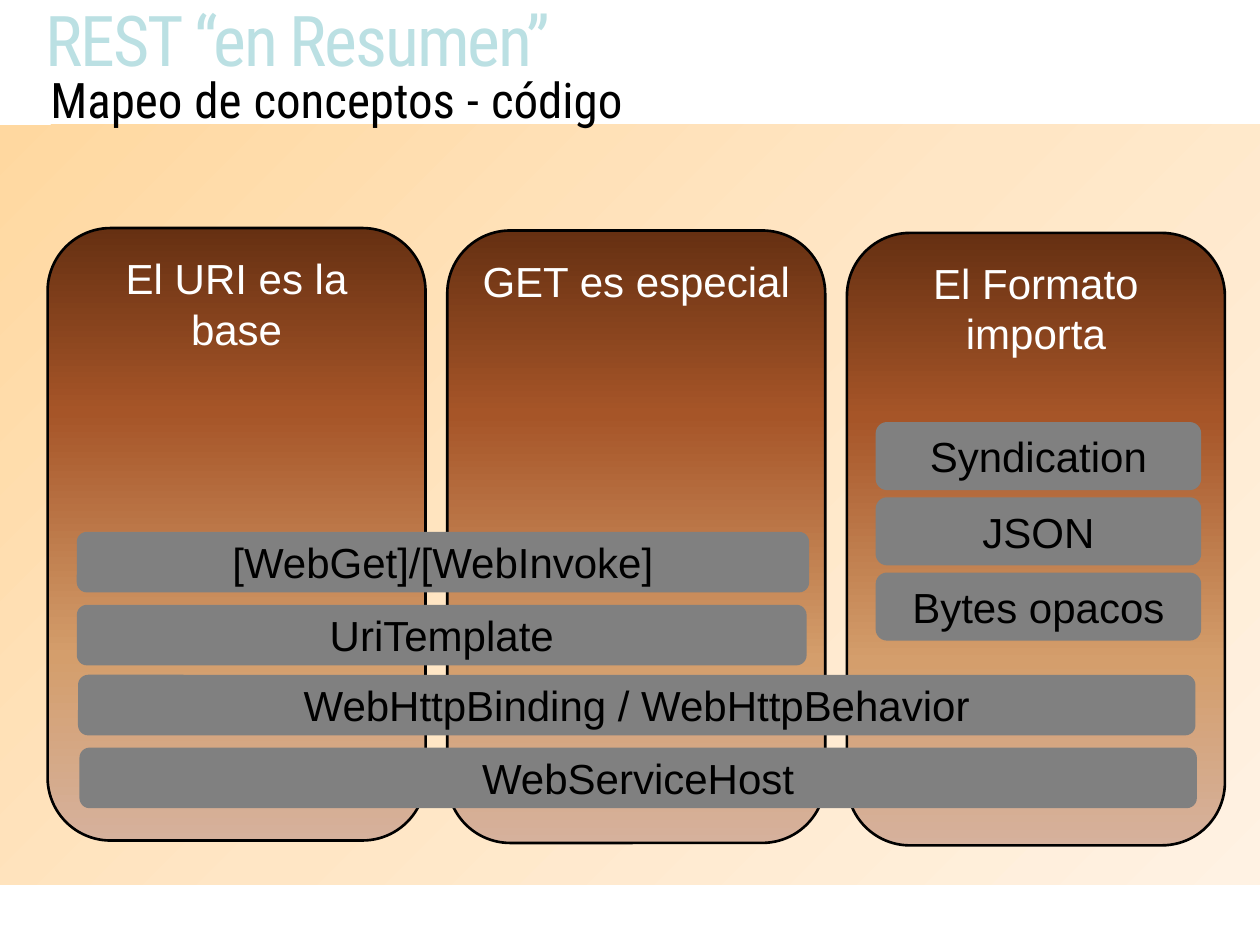
from dataclasses import dataclass

from lxml import etree
from pptx import Presentation
from pptx.dml.color import RGBColor
from pptx.enum.shapes import MSO_SHAPE
from pptx.enum.text import MSO_ANCHOR, PP_ALIGN
from pptx.oxml.ns import qn
from pptx.util import Pt

RECTANGLE = MSO_SHAPE.RECTANGLE
ROUNDED = MSO_SHAPE.ROUNDED_RECTANGLE
TOP, MIDDLE = MSO_ANCHOR.TOP, MSO_ANCHOR.MIDDLE
CENTER = PP_ALIGN.CENTER


@dataclass(frozen=True)
class Theme:
    heading_font: str = "Roboto Condensed"
    gap_font: str = "Arial Narrow"
    label_font: str = "Arial"
    title_size: float = 40
    subtitle_size: float = 28
    gap_size: float = 30
    label_size: float = 24
    title: str = "BBE0E3"
    gap: str = "FFFFCC"
    dark: str = "000000"
    light: str = "FFFFFF"
    bar: str = "808080"
    panel_stops: tuple = ((0, "FFD8A0"), (50, "FFE6C5"), (100, "FFF2E3"))
    column_stops: tuple = ((0, "D6B19C"), (30, "D49E6C"), (70, "A65528"), (100, "663012"))


THEME = Theme()


def set_font(font, name, size, color):
    font.name = name
    font.size = Pt(size)
    font.color.rgb = RGBColor.from_string(color)


def set_gradient(shape, stops, clockwise_angle):
    """Fill with any number of (percent, colour) stops."""
    shape.fill.gradient()
    shape.fill.gradient_angle = 360 - clockwise_angle
    stop_list = shape._element.spPr.find(qn("a:gradFill")).find(qn("a:gsLst"))
    for old_stop in list(stop_list):
        stop_list.remove(old_stop)
    for percent, color in stops:
        stop = etree.SubElement(stop_list, qn("a:gs"), pos=str(percent * 1000))
        etree.SubElement(stop, qn("a:srgbClr"), val=color)


def add_plain_shape(slide, kind, left, top, width, height):
    shape = slide.shapes.add_shape(kind, Pt(left), Pt(top), Pt(width), Pt(height))
    shape.shadow.inherit = False
    shape.line.fill.background()
    return shape


def add_label(shape, text, color, anchor):
    frame = shape.text_frame
    frame.word_wrap = True
    frame.vertical_anchor = anchor
    paragraph = frame.paragraphs[0]
    paragraph.text = text
    paragraph.alignment = CENTER
    set_font(paragraph.font, THEME.label_font, THEME.label_size, color)


def add_column(slide, text, left, top):
    column = add_plain_shape(slide, ROUNDED, left, top, 216, 350)
    set_gradient(column, THEME.column_stops, 270)
    column.line.color.rgb = RGBColor.from_string(THEME.dark)
    column.line.width = Pt(1.5)
    add_label(column, text, THEME.light, TOP)


def add_bar(slide, text, left, top, width, height):
    bar = add_plain_shape(slide, ROUNDED, left, top, width, height)
    bar.fill.solid()
    bar.fill.fore_color.rgb = RGBColor.from_string(THEME.bar)
    add_label(bar, text, THEME.dark, MIDDLE)


def add_heading(slide, left, top, width, height, inset):
    """Add a heading box and return its first paragraph."""
    box = slide.shapes.add_textbox(Pt(left), Pt(top), Pt(width), Pt(height))
    frame = box.text_frame
    frame.word_wrap = True
    frame.margin_left = 0
    frame.margin_top = frame.margin_bottom = Pt(inset)
    paragraph = frame.paragraphs[0]
    paragraph.line_spacing = 0.9
    return paragraph


def add_title(slide, text):
    paragraph = add_heading(slide, 26, 0, 633.6, 90, 3.6)
    run = paragraph.add_run()
    run.text = text
    set_font(run.font, THEME.heading_font, THEME.title_size, THEME.title)
    run.font._element.set("spc", "-120")


def add_subtitle(slide, text):
    """Set the words in the heading font and the gaps in a narrower one."""
    paragraph = add_heading(slide, 28.8, 41.8, 661, 32.4, 0)
    for index, word in enumerate(text.split()):
        if index:
            gap = paragraph.add_run()
            gap.text = " "
            set_font(gap.font, THEME.gap_font, THEME.gap_size, THEME.gap)
        run = paragraph.add_run()
        run.text = word
        set_font(run.font, THEME.heading_font, THEME.subtitle_size, THEME.dark)


def main():
    presentation = Presentation()
    presentation.slide_width, presentation.slide_height = Pt(720), Pt(540)
    slide = presentation.slides.add_slide(presentation.slide_layouts[6])

    panel = add_plain_shape(slide, RECTANGLE, -1.4, 71.3, 722.2, 434.2)
    set_gradient(panel, THEME.panel_stops, 45)
    add_title(slide, "REST “en Resumen”")
    add_subtitle(slide, "Mapeo de conceptos - código")

    columns = ("El URI es la base", "GET es especial", "El Formato importa")
    for index, text in enumerate(columns):
        add_column(slide, text, 27.2 + 228.4 * index, 130.3 + 1.4 * index)

    shared_bars = (
        ("[WebGet]/[WebInvoke]", 43.9, 303.9, 418.5),
        ("UriTemplate", 43.9, 345.6, 417),
        ("WebHttpBinding / WebHttpBehavior", 44.6, 385.6, 638.5),
        ("WebServiceHost", 45.4, 427.2, 638.5),
    )
    for text, left, top, width in shared_bars:
        add_bar(slide, text, left, top, width, 34.6)

    for index, text in enumerate(("Syndication", "JSON", "Bytes opacos")):
        add_bar(slide, text, 500.4, 241.2 + 43 * index, 186, 38.9)

    presentation.save("out.pptx")


if __name__ == "__main__":
    main()
